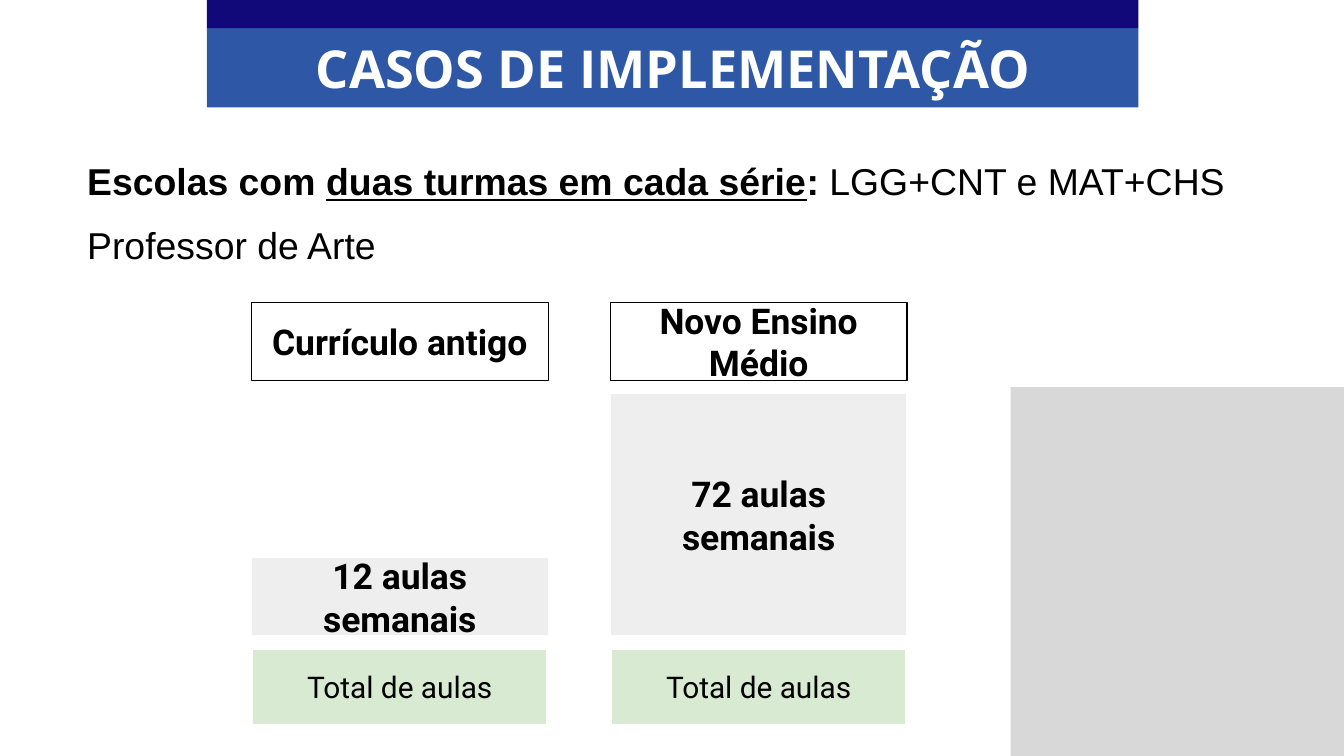
"""Build the slide comparing weekly Art classes in the old and new curriculum."""
from lxml import etree
from pptx import Presentation
from pptx.dml.color import RGBColor
from pptx.enum.shapes import MSO_SHAPE
from pptx.enum.text import MSO_ANCHOR, PP_ALIGN
from pptx.oxml.ns import qn
from pptx.util import Inches, Pt

RECTANGLE = MSO_SHAPE.RECTANGLE
MIDDLE = MSO_ANCHOR.MIDDLE
CENTER = PP_ALIGN.CENTER

COLORS = {
    "white": "FFFFFF",
    "black": "000000",
    "navy": "110979",
    "blue": "2E58A6",
    "light_gray": "EEEEEE",
    "gray": "BFBFBF",
    "green": "D9EAD3",
}


def add_rectangle(shapes, left, top, width, height, fill, line=None, weight=0.75):
    box = shapes.add_shape(
        RECTANGLE, Inches(left), Inches(top), Inches(width), Inches(height)
    )
    box.shadow.inherit = False
    box.fill.solid()
    box.fill.fore_color.rgb = RGBColor.from_string(COLORS[fill])
    if line:
        box.line.color.rgb = RGBColor.from_string(COLORS[line])
        box.line.width = Pt(weight)
    else:
        box.line.fill.background()
    return box


def add_span(para, text, color="black", **font_values):
    span = para.add_run()
    span.text = text
    span.font.color.rgb = RGBColor.from_string(COLORS[color])
    for name, value in font_values.items():
        setattr(span.font, name, value)


deck = Presentation()
deck.slide_width = Inches(10)
deck.slide_height = Inches(10) * 9 // 16
page = deck.slides.add_slide(deck.slide_layouts[6])

intro = page.shapes.add_textbox(Inches(0.55), Inches(1.08), Inches(9.54), Inches(1.02))
frame = intro.text_frame
frame.word_wrap = True
for side in ("left", "top", "right", "bottom"):
    setattr(frame, f"margin_{side}", Inches(0.1))
para = frame.paragraphs[0]
body_font = {"name": "Arial", "size": Pt(20)}
for text, bold, underline in [
    ("Escolas com ", True, False),
    ("duas turmas em cada série", True, True),
    (": ", True, False),
    ("LGG+CNT e MAT+CHS", False, False),
]:
    add_span(para, text, bold=bold, underline=underline, **body_font)
para = frame.add_paragraph()
para.space_before = para.space_after = Pt(10)
add_span(para, "Professor de Arte", **body_font)

header = page.shapes.add_group_shape()
add_rectangle(header.shapes, 1.54, 0.21, 6.93, 0.59, "blue")
add_rectangle(header.shapes, 1.54, 0, 6.93, 0.21, "navy")

title = page.shapes.add_textbox(Inches(1.54), Inches(0.22), Inches(6.93), Inches(0.57))
title.text_frame.word_wrap = True
para = title.text_frame.paragraphs[0]
para.alignment = CENTER
add_span(
    para, "CASOS DE IMPLEMENTAÇÃO", "white", name="Open Sans", size=Pt(28), bold=True
)

panel = add_rectangle(page.shapes, 7.52, 2.88, 2.48, 2.81, "gray")
panel_color = panel.fill._xPr.find(qn("a:solidFill"))[0]
etree.SubElement(panel_color, qn("a:alpha"), val="60000")

box_width, box_height, bars_bottom = 2.21, 0.58, 4.73
for left, heading, classes, bar_height in [
    (1.87, "Currículo antigo", "12 aulas semanais", box_height),
    (4.54, "Novo Ensino Médio", "72 aulas semanais", 1.8),
]:
    for text, top, height, fill, line, weight, size, bold in [
        (heading, 2.25, box_height, "white", "black", 0.75, 19, True),
        (classes, bars_bottom - bar_height, bar_height,
         "light_gray", "white", 0.75, 19, True),
        ("Total de aulas", 4.82, box_height, "green", "white", 2.25, 16, False),
    ]:
        box = add_rectangle(
            page.shapes, left, top, box_width, height, fill, line, weight
        )
        frame = box.text_frame
        frame.word_wrap = True
        frame.vertical_anchor = MIDDLE
        for side in ("left", "top", "right", "bottom"):
            setattr(frame, f"margin_{side}", Inches(0.1))
        para = frame.paragraphs[0]
        para.alignment = CENTER
        add_span(para, text, name="Roboto", size=Pt(size), bold=bold)

deck.save("out.pptx")
